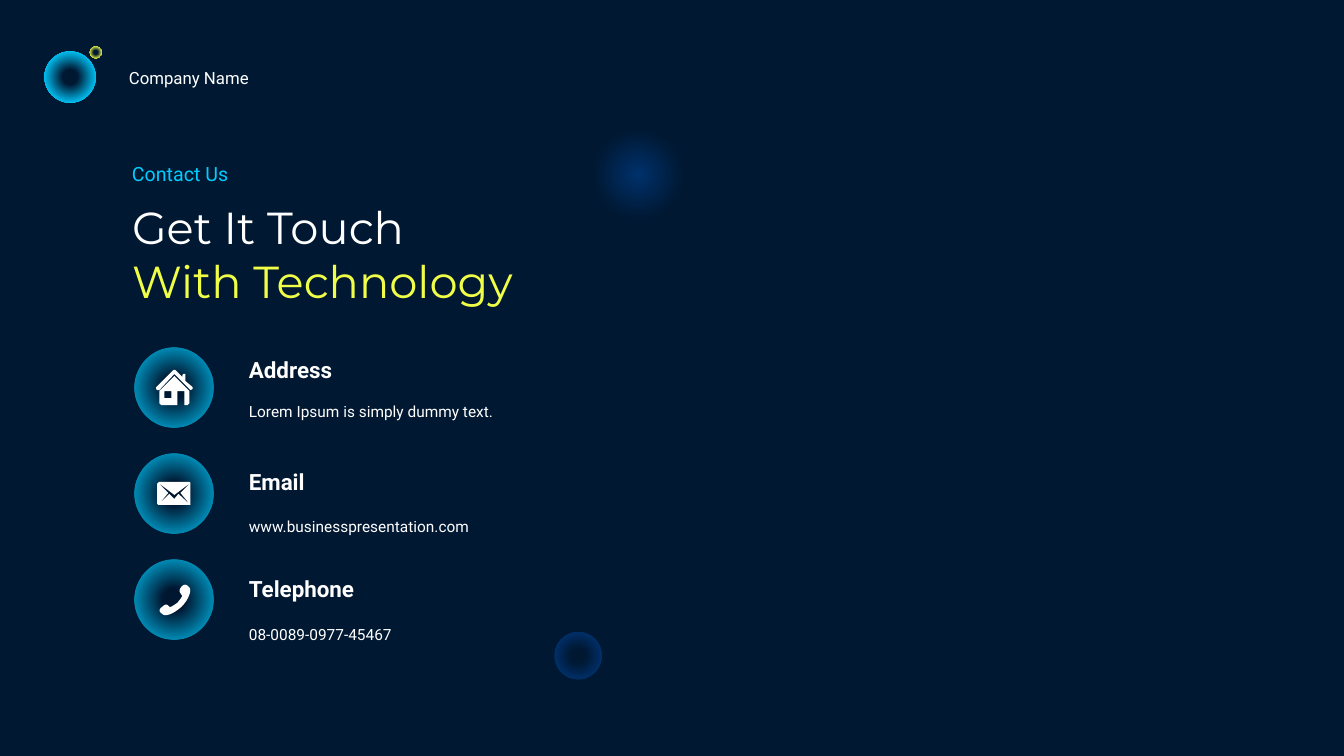
from lxml import etree
from pptx import Presentation
from pptx.dml.color import RGBColor
from pptx.enum.shapes import MSO_SHAPE
from pptx.enum.text import MSO_ANCHOR, MSO_AUTO_SIZE, PP_ALIGN
from pptx.oxml.ns import qn
from pptx.util import Pt

PX = 9144  # EMU per px, 100 px to the inch
OVAL = MSO_SHAPE.OVAL
TOP, LEFT = MSO_ANCHOR.TOP, PP_ALIGN.LEFT
GROW = MSO_AUTO_SIZE.SHAPE_TO_FIT_TEXT

NAVY = RGBColor(0x00, 0x18, 0x32)
CYAN = RGBColor(0x00, 0xCC, 0xFF)
YELLOW = RGBColor(0xF0, 0xFE, 0x47)
BLUE = RGBColor(0x00, 0x31, 0x6B)
WHITE = RGBColor(0xFF, 0xFF, 0xFF)

CENTRE = (50, 50, 50, 50)
BOTTOM_LEFT = (100, 0, 0, 100)

FRAME = {"word_wrap": True, "auto_size": GROW, "vertical_anchor": TOP}
COMPANY = {"name": "Roboto", "size": Pt(12)}
KICKER = {"name": "Roboto", "size": Pt(14)}
HEADLINE = {"name": "Montserrat", "size": Pt(32)}
LABEL = {"name": "Roboto", "size": Pt(16), "bold": True}
DETAIL = {"name": "Roboto", "size": Pt(11)}

ICON_TOP, ICON_PITCH, ICON_SIZE = 345, 105, 79
# label, label top, detail, detail top, detail width
CONTACTS = [
    ("Address", 348, "Lorem Ipsum is simply dummy text.", 385, 328),
    ("Email", 460, "www.businesspresentation.com", 499, 308),
    ("Telephone", 566, "08-0089-0977-45467", 606, 254),
]

HOUSE = [
    [(191, 386), (189, 387), (173, 371), (158, 387), (156, 387), (155, 386),
     (155, 384), (172, 367), (174, 367), (181, 374), (181, 372), (182, 371),
     (184, 371), (184, 378), (191, 384)],
    [(188, 388), (188, 400), (186, 402), (183, 402), (183, 388), (176, 388),
     (176, 402), (160, 402), (158, 400), (158, 388), (173, 373)],
    [(170, 388), (163, 388), (163, 395), (170, 395)],
]
ENVELOPE = [
    [(179, 489), (189, 479), (189, 501)],
    [(157, 479), (158, 478), (188, 478), (189, 479), (173, 491)],
    [(157, 501), (156, 500), (156, 480), (157, 479), (167, 489)],
    [(173, 495), (177, 490), (189, 501), (157, 501), (168, 490)],
]
HANDSET_START = (176, 598)
HANDSET_CURVES = [
    [(173, 600), (169, 603), (168, 602)],
    [(166, 600), (165, 598), (161, 602)],
    [(156, 605), (159, 608), (161, 609)],
    [(163, 612), (171, 610), (180, 602)],
    [(188, 594), (190, 585), (188, 583)],
    [(186, 581), (184, 578), (180, 582)],
    [(177, 586), (178, 587), (180, 590)],
    [(182, 591), (179, 594), (176, 598)],
]


def px(*lengths):
    return [round(length * PX) for length in lengths]


def radial_fill(stops, focus=CENTRE, opacity=100):
    """Build a gradFill element from (percent, colour) stops."""
    grad = etree.Element(qn("a:gradFill"), rotWithShape="1")
    stop_list = etree.SubElement(grad, qn("a:gsLst"))
    for percent, colour in stops:
        stop = etree.SubElement(stop_list, qn("a:gs"), pos=str(percent * 1000))
        tint = etree.SubElement(stop, qn("a:srgbClr"), val=str(colour))
        if opacity < 100:
            etree.SubElement(tint, qn("a:alpha"), val=str(opacity * 1000))
    circle = etree.SubElement(grad, qn("a:path"), path="circle")
    etree.SubElement(circle, qn("a:fillToRect"),
                     {side: str(share * 1000) for side, share in zip("ltrb", focus)})
    return grad


def ring_stops(rim):
    return [(0, NAVY), (20, NAVY), (75, rim)]


def add_orb(shapes, left, top, size, stops, opacity=100):
    orb = shapes.add_shape(OVAL, *px(left, top, size, size))
    orb.shadow.inherit = False
    orb.line.fill.background()
    geometry = orb._element.spPr.find(qn("a:prstGeom"))
    geometry.addnext(radial_fill(stops, opacity=opacity))


def add_icon(shapes, outlines):
    contours = [[px(*point) for point in outline] for outline in outlines]
    builder = shapes.build_freeform(*contours[0][0])
    builder.add_line_segments(contours[0][1:])
    for contour in contours[1:]:
        builder.move_to(*contour[0])
        builder.add_line_segments(contour[1:])
    icon = builder.convert_to_shape()
    icon.shadow.inherit = False
    icon.fill.solid()
    icon.fill.fore_color.rgb = WHITE
    icon.line.fill.background()


def curve_points(start, curves, steps=8):
    """Sample a chain of cubic curves as a list of points."""
    points = [start]
    for first, second, end in curves:
        origin = points[-1]
        for step in range(1, steps + 1):
            t = step / steps
            u = 1 - t
            points.append(tuple(
                u**3 * a + 3 * u * u * t * b + 3 * u * t * t * c + t**3 * d
                for a, b, c, d in zip(origin, first, second, end)))
    return points


def apply_format(target, values):
    for attribute, value in values.items():
        setattr(target, attribute, value)


def add_run(paragraph, text, font_format, colour=None):
    run = paragraph.add_run()
    run.text = text
    apply_format(run.font, font_format)
    if colour is not None:
        run.font.color.rgb = colour
    return run


def add_text(shapes, left, top, width, height, text, font_format,
             colour=WHITE, spacing=1.0):
    frame = shapes.add_textbox(*px(left, top, width, height)).text_frame
    apply_format(frame, FRAME)
    paragraph = frame.paragraphs[0]
    paragraph.line_spacing = spacing
    add_run(paragraph, text, font_format, colour)


def fill_title(title):
    title.left, title.top, title.width, title.height = px(121, 193, 521, 118)
    frame = title.text_frame
    apply_format(frame, FRAME)
    first, second = frame.paragraphs[0], frame.add_paragraph()
    first.alignment = second.alignment = LEFT
    add_run(first, "Get It Touch", HEADLINE, WHITE)
    accent = add_run(second, "With Technology", HEADLINE)
    accent.font._element.insert(
        0, radial_fill([(0, YELLOW), (100, CYAN)], BOTTOM_LEFT))


def add_contacts(shapes):
    icons = [HOUSE, ENVELOPE, [curve_points(HANDSET_START, HANDSET_CURVES)]]
    for row, (contact, icon) in enumerate(zip(CONTACTS, icons)):
        label, label_top, detail, detail_top, detail_width = contact
        add_orb(shapes, 133, ICON_TOP + row * ICON_PITCH, ICON_SIZE,
                ring_stops(CYAN), opacity=70)
        add_icon(shapes, icon)
        add_text(shapes, 237, label_top, 198, 37, label, LABEL)
        add_text(shapes, 237, detail_top, detail_width, 35, detail, DETAIL,
                 spacing=1.5)


def main():
    deck = Presentation()
    deck.slide_width, deck.slide_height = px(1333, 750)
    slide = deck.slides.add_slide(deck.slide_layouts[5])
    slide.background.fill.solid()
    slide.background.fill.fore_color.rgb = NAVY
    shapes = slide.shapes

    fill_title(shapes.title)
    add_contacts(shapes)
    emblem = shapes.add_group_shape().shapes
    add_orb(emblem, 44, 51, 51, ring_stops(CYAN))
    add_orb(emblem, 89, 46, 12, ring_stops(YELLOW))
    add_text(shapes, 121, 156, 169, 34, "Contact Us", KICKER, CYAN)
    add_text(shapes, 118, 62, 180, 30, "Company Name", COMPANY)
    add_orb(shapes, 578, 118, 110, [(0, BLUE), (59, NAVY)])
    add_orb(shapes, 550, 627, 47, ring_stops(BLUE))

    deck.save("out.pptx")


if __name__ == "__main__":
    main()
